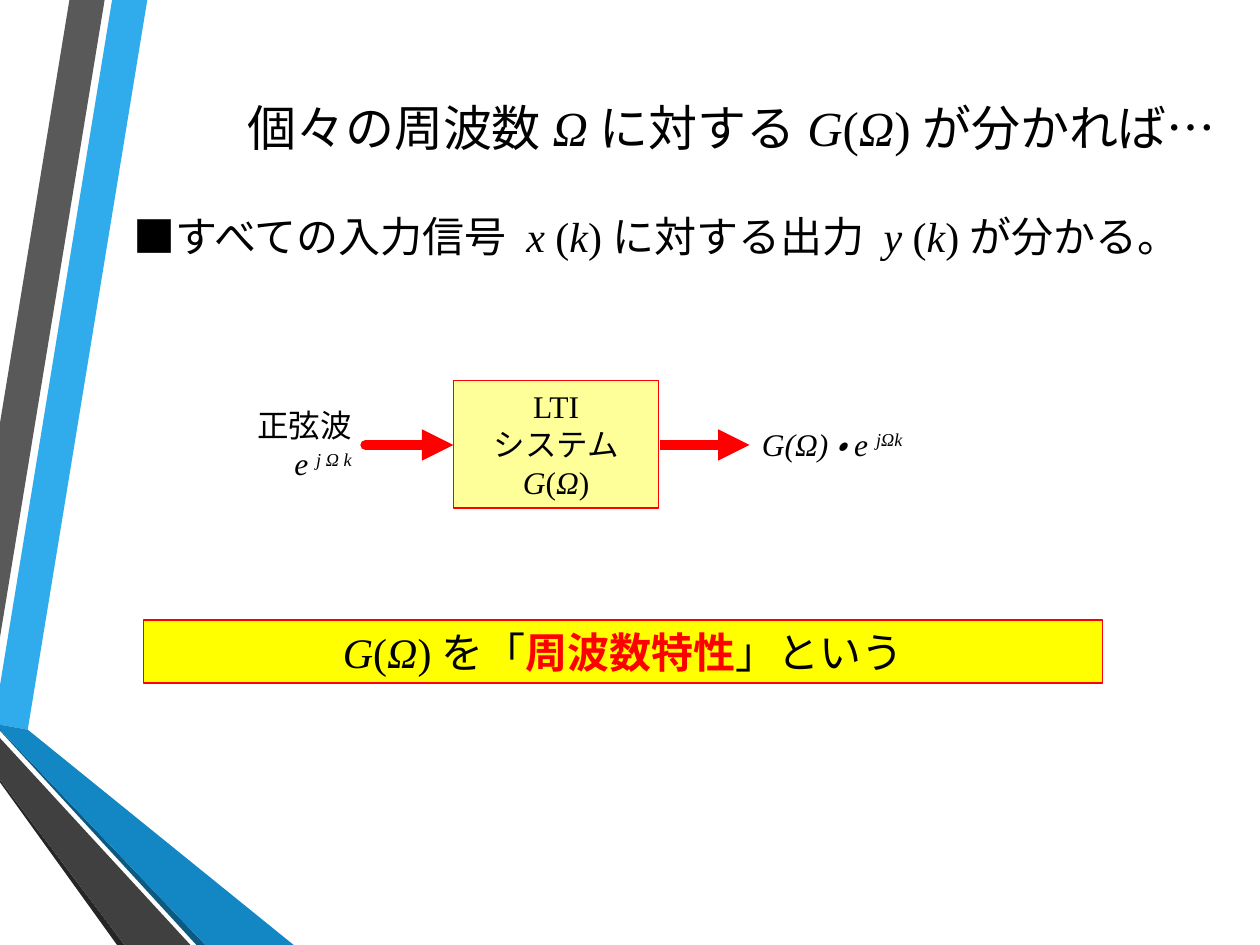
from typing import NamedTuple

from lxml import etree
from pptx import Presentation
from pptx.dml.color import RGBColor
from pptx.enum.lang import MSO_LANGUAGE_ID
from pptx.enum.shapes import MSO_CONNECTOR, MSO_SHAPE
from pptx.enum.text import MSO_ANCHOR, PP_ALIGN
from pptx.oxml.ns import qn
from pptx.util import Cm, Pt

LEFT, MID, RIGHT = PP_ALIGN.LEFT, PP_ALIGN.CENTER, PP_ALIGN.RIGHT
TOP, HALF = MSO_ANCHOR.TOP, MSO_ANCHOR.MIDDLE
RECT, LINE = MSO_SHAPE.RECTANGLE, MSO_CONNECTOR.STRAIGHT
JAPAN = MSO_LANGUAGE_ID.JAPANESE
SERIF, SANS = "Times New Roman", "Calibri"
RED, BLACK = "FF0000", "000000"
HANG = 0.99
FLOW = 8.97


class Band(NamedTuple):
    fill: str
    points: list[tuple[int, int]]


class Run(NamedTuple):
    text: str
    font: str = SERIF
    slant: bool = False
    bold: bool = False
    color: str = BLACK
    base: int = 0


class Box(NamedTuple):
    left: float
    top: float
    width: float
    height: float


class Arrow(NamedTuple):
    start: float
    end: float
    cap: str


BANDS = [
    Band("30ACEC", [(0, 1382), (0, 1461), (56, 1471), (297, 0), (226, 0)]),
    Band("595959", [(211, 0), (140, 0), (0, 853), (0, 1285)]),
    Band("262626", [(0, 1572), (0, 1577), (236, 1905), (251, 1905)]),
    Band("0C5A82", [(0, 1471), (0, 1473), (396, 1905), (414, 1905)]),
    Band("1287C3", [(0, 1471), (414, 1905), (592, 1905), (56, 1471), (0, 1461)]),
    Band("404040", [(0, 1572), (251, 1905), (384, 1905), (0, 1488)]),
]
ARROWS = [Arrow(7.37, 9.14, "rnd"), Arrow(13.31, 15.11, "flat")]


def paint(target, color: str) -> None:
    target.solid()
    target.fore_color.rgb = RGBColor.from_string(color)


def var(text: str, **style) -> Run:
    return Run(text, slant=True, **style)


def sans(text: str) -> Run:
    return Run(text, SANS)


def call(name: str, arg: str) -> list[Run]:
    return [var(name), Run("("), var(arg)]


def write(shape, text: list[list[Run]], *, size: float, align=LEFT,
          anchor=TOP, hang: float = HANG) -> None:
    frame = shape.text_frame
    frame.word_wrap = True
    frame.vertical_anchor = anchor
    for index, row in enumerate(text):
        para = frame.add_paragraph() if index else frame.paragraphs[0]
        para.alignment = align
        props = para._p.get_or_add_pPr()
        props.set("marL", str(Cm(hang)))
        props.set("indent", str(-Cm(hang)))
        for part in row:
            run = para.add_run()
            run.text = part.text
            font = run.font
            font.name, font.size = part.font, Pt(size)
            font.italic, font.bold = part.slant, part.bold
            font.language_id = JAPAN
            paint(font.fill, part.color)
            if part.base:
                run._r.get_or_add_rPr().set("baseline", str(part.base * 1000))


def label(slide, box: Box, text: list[list[Run]], **style) -> None:
    write(slide.shapes.add_textbox(*map(Cm, box)), text, **style)


def panel(slide, box: Box, fill: str, text: list[list[Run]], **style) -> None:
    shape = slide.shapes.add_shape(RECT, *map(Cm, box))
    shape.shadow.inherit = False
    paint(shape.fill, fill)
    paint(shape.line.fill, RED)
    shape.line.width = Pt(0.75)
    write(shape, text, align=MID, **style)


def stripe(slide, band: Band) -> None:
    first, *rest = band.points
    pen = slide.shapes.build_freeform(*first, scale=Cm(0.01))
    pen.add_line_segments(rest, close=True)
    shape = pen.convert_to_shape()
    shape.shadow.inherit = False
    paint(shape.fill, band.fill)
    shape.line.fill.background()


def link(slide, arrow: Arrow) -> None:
    line = slide.shapes.add_connector(
        LINE, Cm(arrow.start), Cm(FLOW), Cm(arrow.end), Cm(FLOW))
    paint(line.line.fill, RED)
    line.line.width = Pt(6)
    props = line._element.spPr
    edge = props.find(qn("a:ln"))
    edge.set("cap", arrow.cap)
    etree.SubElement(edge, qn("a:tailEnd"), type="triangle")
    etree.SubElement(props, qn("a:effectLst"))


def main() -> None:
    deck = Presentation()
    deck.slide_width, deck.slide_height = Cm(25.4), Cm(19.05)
    slide = deck.slides.add_slide(deck.slide_layouts[6])
    for band in BANDS:
        stripe(slide, band)

    title = [sans("個々の周波数"), var("Ω"), Run("に対する"),
             *call("G", "Ω"), Run(")が"), sans("分かれば…")]
    label(slide, Box(3.35, 0.53, 21.41, 4.06), [title],
          size=28, align=RIGHT, anchor=HALF, hang=0)
    claim = [Run("■"), sans("すべての入力信号 "), *call("x ", "k"),
             Run(")に対する出力 "), *call("y ", "k"), Run(")"),
             sans("が分かる。")]
    label(slide, Box(2.44, 4.11, 22.33, 1.27), [claim], size=24)

    for arrow in ARROWS:
        link(slide, arrow)
    panel(slide, Box(9.14, 7.67, 4.14, 2.57), "FFFF99",
          [[Run("LTI")], [Run("システム")], [*call("G", "Ω"), Run(")")]],
          size=18, anchor=HALF)
    label(slide, Box(3.2, 8.05, 4.14, 1.8),
          [[Run("正弦波")], [var("e "), var("j Ω k", base=30)]],
          size=18, align=RIGHT, anchor=HALF)
    label(slide, Box(15.11, 8.43, 5.61, 1.02),
          [[var("G(Ω)・e "), var("jΩk", base=30)]], size=18, anchor=HALF)

    name = [*call("G", "Ω"), Run(")を「"),
            Run("周波数特性", bold=True, color=RED), Run("」という")]
    panel(slide, Box(2.9, 12.5, 19.33, 1.27), "FFFF00", [name], size=24)
    deck.save("out.pptx")


if __name__ == "__main__":
    main()
